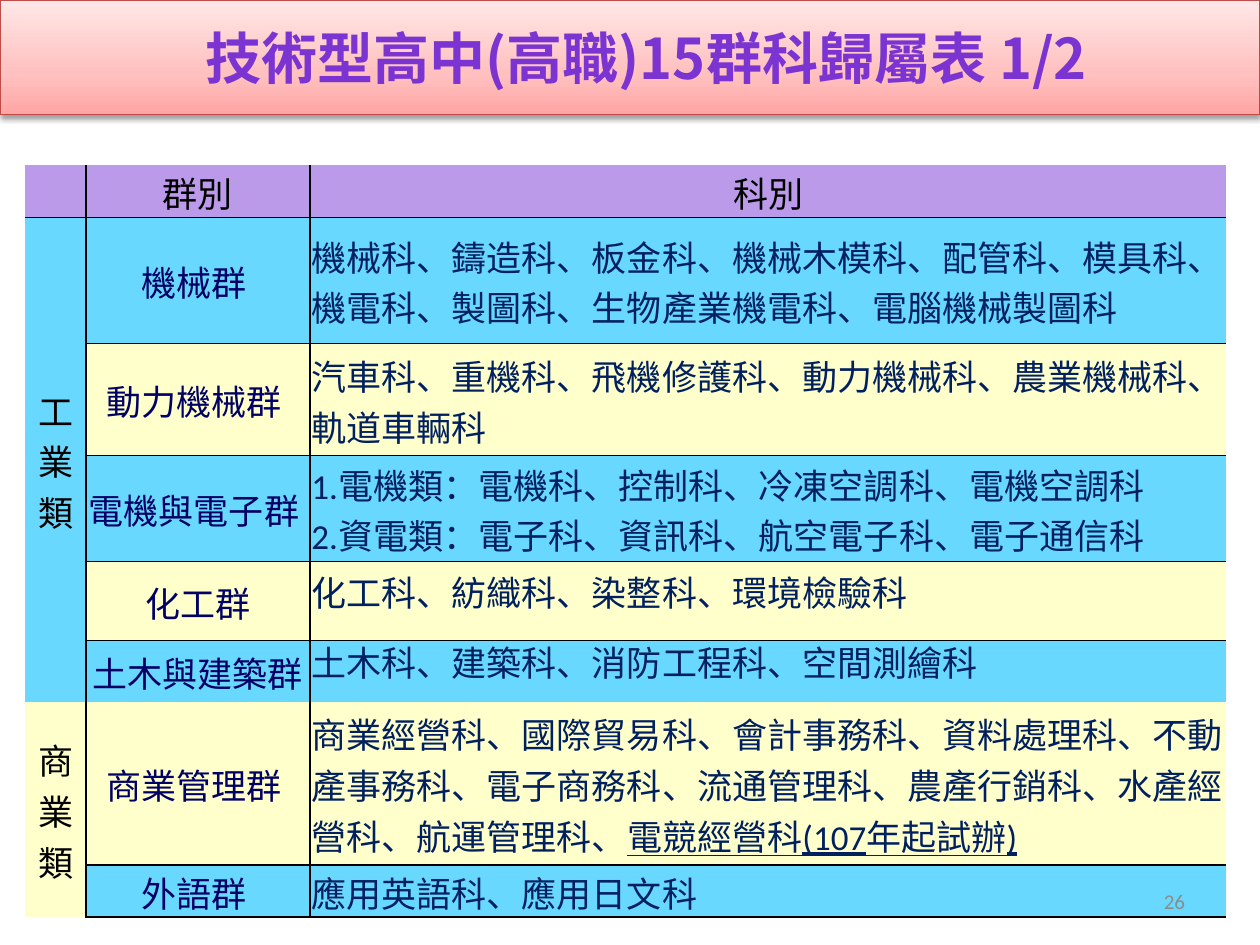
from dataclasses import dataclass

from pptx import Presentation
from pptx.dml.color import RGBColor
from pptx.enum.text import MSO_ANCHOR as Anchor, MSO_AUTO_SIZE as AutoSize, PP_ALIGN as Align
from pptx.oxml import parse_xml
from pptx.oxml.ns import nsdecls
from pptx.util import Cm, Pt


@dataclass(frozen=True)
class Theme:
    latin: str = "Calibri"
    cjk: str = "Noto Sans CJK SC"
    title_size: int = 32
    body_size: int = 20
    number_size: int = 12
    title: str = "7B34D2"
    title_line: str = "BF4C48"
    title_stops: tuple = ((0, "FFA6A5"), (35, "FFC0BF"), (100, "FFE7E7"))
    header: str = "BB9BE9"
    bands: tuple = ("69D8FF", "FFFFCC")
    black: str = "000000"
    group: str = "000066"
    course: str = "002060"
    number: str = "8C8C8C"


CATEGORIES = [("工業類", 5), ("商業類", 2)]

# Group name, then paragraphs of courses
GROUPS = [
    ("機械群 ", ["機械科、鑄造科、板金科、機械木模科、配管科、模具科、"
              "機電科、製圖科、生物產業機電科、電腦機械製圖科"]),
    ("動力機械群 ", ["汽車科、重機科、飛機修護科、動力機械科、農業機械科、軌道車輛科"]),
    ("電機與電子群 ", ["1.電機類：電機科、控制科、冷凍空調科、電機空調科",
                 "2.資電類：電子科、資訊科、航空電子科、電子通信科"]),
    ("化工群", ["化工科、紡織科、染整科、環境檢驗科"]),
    ("土木與建築群", ["土木科、建築科、消防工程科、空間測繪科"]),
    ("商業管理群 ", ["商業經營科、國際貿易科、會計事務科、資料處理科、不動產事務科、"
                "電子商務科、流通管理科、農產行銷科、水產經營科、航運管理科、"]),
    ("外語群 ", ["應用英語科、應用日文科"]),
]
TRIAL_COURSE = "電競經營科(107年起試辦)"
COLUMNS = [1.22, 4.52, 18.47]
ROWS = [0.99, 2.54, 2.26, 2.13, 1.6, 1.24, 3.28, 0.99]
TIGHT_ROWS = (4, 5)
LAST_INDUSTRY_ROW, TRIAL_ROW = 5, 6


class Deck:
    def __init__(self, theme):
        self.theme = theme
        self.prs = Presentation()
        self.prs.slide_width, self.prs.slide_height = Cm(25.4), Cm(19.05)
        self.slide = self.prs.slides.add_slide(self.prs.slide_layouts[5])

    def style(self, r, size, color, font=None, bold=False):
        f = r.font
        f.size, f.bold, f.name = Pt(size), bold, font or self.theme.latin
        f.color.rgb = RGBColor.from_string(color)
        r._r.get_or_add_rPr().append(
            parse_xml(f'<a:ea {nsdecls("a")} typeface="{self.theme.cjk}"/>'))

    def title(self, text, left, top, width, height):
        t, sp = self.theme, self.slide.shapes.title
        sp.left, sp.top, sp.width, sp.height = map(Cm, (left, top, width, height))
        stops = "".join(f'<a:gs pos="{pos * 1000}"><a:srgbClr val="{color}"/></a:gs>'
                        for pos, color in t.title_stops)
        props = sp._element.spPr
        props.append(parse_xml(
            f'<a:gradFill {nsdecls("a")} rotWithShape="1"><a:gsLst>{stops}</a:gsLst>'
            '<a:lin ang="16200000" scaled="0"/></a:gradFill>'))
        sp.line.color.rgb = RGBColor.from_string(t.title_line)
        sp.line.width = Pt(0.75)
        props.append(parse_xml(
            f'<a:effectLst {nsdecls("a")}><a:outerShdw blurRad="40000" dist="20000" '
            'dir="5400000" rotWithShape="0"><a:srgbClr val="000000">'
            '<a:alpha val="38000"/></a:srgbClr></a:outerShdw></a:effectLst>'))
        tf = sp.text_frame
        tf.text = text
        tf.auto_size, tf.vertical_anchor = AutoSize.NONE, Anchor.MIDDLE
        tf.margin_left = Cm(0.9)
        p = tf.paragraphs[0]
        p.alignment = Align.CENTER
        self.style(p.runs[0], t.title_size, t.title, t.cjk, bold=True)

    def table(self, left, top, columns, rows):
        shape = self.slide.shapes.add_table(
            len(rows), len(columns), Cm(left), Cm(top), Cm(sum(columns)), Cm(sum(rows)))
        tbl = shape.table
        tbl.first_row = tbl.horz_banding = False
        for col, width in zip(tbl.columns, columns):
            col.width = Cm(width)
        for row, height in zip(tbl.rows, rows):
            row.height = Cm(height)
        return tbl

    def borders(self, cell, visible):
        props = cell._tc.get_or_add_tcPr()
        for i, side in enumerate("LRTB"):
            paint = (f'<a:solidFill><a:srgbClr val="{self.theme.black}"/></a:solidFill>'
                     if side in visible else "<a:noFill/>")
            props.insert(i, parse_xml(
                f'<a:ln{side} {nsdecls("a")} w="12700">{paint}</a:ln{side}>'))

    def cell(self, cell, lines, fill, color, align=Align.CENTER):
        cell.fill.solid()
        cell.fill.fore_color.rgb = RGBColor.from_string(fill)
        cell.vertical_anchor = Anchor.MIDDLE
        cell.margin_left = cell.margin_right = cell.margin_top = Cm(0.03)
        cell.margin_bottom = 0
        cell.text_frame.text = "\n".join(lines)
        for p in cell.text_frame.paragraphs:
            p.alignment = align
            for r in p.runs:
                self.style(r, self.theme.body_size, color)

    def number(self, text, left, top, width, height):
        box = self.slide.shapes.add_textbox(*map(Cm, (left, top, width, height)))
        tf = box.text_frame
        tf.word_wrap, tf.vertical_anchor = True, Anchor.MIDDLE
        tf.text = text
        p = tf.paragraphs[0]
        p.alignment = Align.RIGHT
        self.style(p.runs[0], self.theme.number_size, self.theme.number)


def main():
    theme = Theme()
    deck = Deck(theme)
    deck.title("技術型高中(高職)15群科歸屬表 1/2", 0, 0, 25.4, 2.31)
    tbl = deck.table(0.51, 3.33, COLUMNS, ROWS)

    # Header row
    for c, label in enumerate(["", "群別", "科別"]):
        deck.cell(tbl.cell(0, c), [label], theme.header, theme.black)

    # Groups and their courses, in alternating bands
    for i, (group, courses) in enumerate(GROUPS):
        band = theme.bands[i % 2]
        deck.cell(tbl.cell(i + 1, 1), [group], band, theme.group)
        deck.cell(tbl.cell(i + 1, 2), courses, band, theme.course, Align.LEFT)
    for row in TIGHT_ROWS:
        tbl.cell(row, 2).text_frame.paragraphs[0].line_spacing = Pt(17)

    # Underlined trial course
    r = tbl.cell(TRIAL_ROW, 2).text_frame.paragraphs[0].add_run()
    r.text = TRIAL_COURSE
    deck.style(r, theme.body_size, theme.course)
    r.font.underline = True

    # Categories spanning their groups
    row = 1
    for (category, span), band in zip(CATEGORIES, theme.bands):
        tbl.cell(row, 0).merge(tbl.cell(row + span - 1, 0))
        deck.cell(tbl.cell(row, 0), [category], band, theme.black)
        row += span

    # Inner rules; none between the two categories
    for row in range(len(ROWS)):
        for col in range(len(COLUMNS)):
            sides = ("L" if col > 0 else "") + ("R" if col < 2 else "")
            if row == 0 or (col > 0 and row != LAST_INDUSTRY_ROW):
                sides += "B"
            if row == 1 or (col > 0 and row not in (0, LAST_INDUSTRY_ROW + 1)):
                sides += "T"
            deck.borders(tbl.cell(row, col), sides)

    deck.number("26", 18.21, 17.65, 5.93, 1.02)
    deck.prs.save("out.pptx")


if __name__ == "__main__":
    main()
